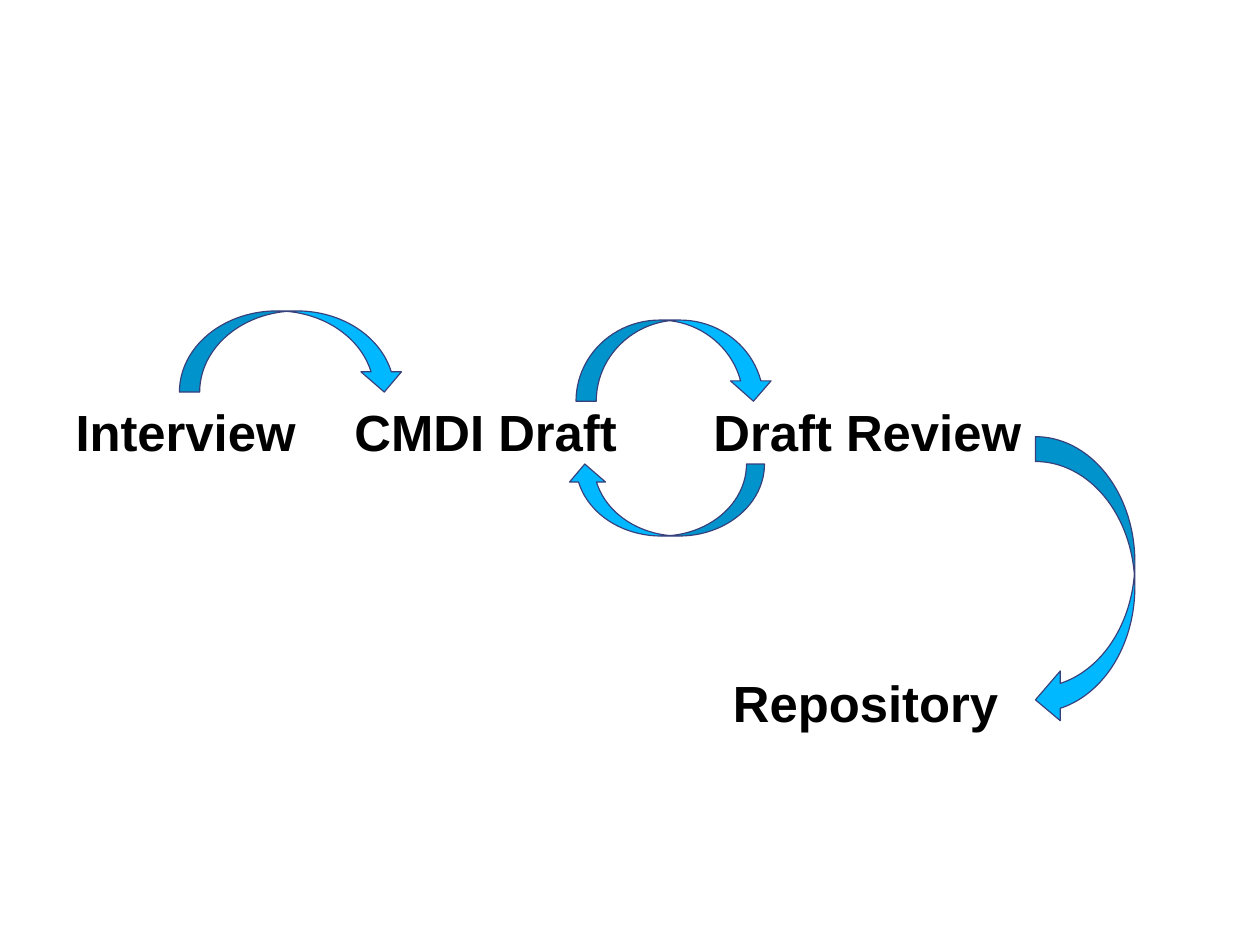
from pptx import Presentation
from pptx.dml.color import RGBColor
from pptx.enum.shapes import MSO_SHAPE
from pptx.enum.text import MSO_ANCHOR, PP_ALIGN
from pptx.util import Emu, Inches, Pt

DOWN = MSO_SHAPE.CURVED_DOWN_ARROW
UP = MSO_SHAPE.CURVED_UP_ARROW
LEFT = MSO_SHAPE.CURVED_LEFT_ARROW
MIDDLE = MSO_ANCHOR.MIDDLE
CENTER = PP_ALIGN.CENTER

PAGE_WIDTH = Emu(10080625)
PAGE_HEIGHT = Emu(7559675)
LABEL_HEIGHT = 0.61
STEP_TOP = 3.5
REPOSITORY_TOP = 5.87


def color(value):
    return RGBColor.from_string(value)


def add_label(page, text, left, top, width):
    box = page.shapes.add_textbox(
        Inches(left), Inches(top), Inches(width), Inches(LABEL_HEIGHT))
    frame = box.text_frame
    frame.word_wrap = False
    frame.vertical_anchor = MIDDLE
    para = frame.paragraphs[0]
    para.text = text
    para.alignment = CENTER
    para.line_spacing = 0.93
    para.font.name = "Arial"
    para.font.size = Pt(32)
    para.font.bold = True
    para.font.color.rgb = color("000000")


def add_arrow(page, kind, box, flipped=False):
    arrow = page.shapes.add_shape(kind, *map(Inches, box))
    arrow.shadow.inherit = False
    arrow.fill.solid()
    arrow.fill.fore_color.rgb = color("00B8FF")
    arrow.line.color.rgb = color("37407B")
    arrow.line.width = Pt(0.75)
    for index, value in enumerate((0.25, 0.5, 0.25)):
        arrow.adjustments[index] = value
    if flipped:
        arrow._element.spPr.get_or_add_xfrm().set("flipH", "1")


def add_workflow(page, left, top):
    for text, offset, drop, width in (
        ("Interview", 0, 0, 2.15),
        ("CMDI Draft", 2.44, 0, 2.52),
        ("Draft Review", 5.58, 0, 2.92),
        ("Repository", 5.75, REPOSITORY_TOP - STEP_TOP, 2.55),
    ):
        add_label(page, text, left + offset, top + drop, width)

    for kind, offset, drop, width, height, flipped in (
        (DOWN, 1.02, -0.78, 1.97, 0.71, False),
        (DOWN, 4.49, -0.7, 1.73, 0.71, False),
        (UP, 4.41, 0.56, 1.73, 0.63, True),
        (LEFT, 8.51, 0.32, 0.87, 2.52, False),
    ):
        add_arrow(page, kind, (left + offset, top + drop, width, height), flipped)


def main():
    deck = Presentation()
    deck.slide_width = PAGE_WIDTH
    deck.slide_height = PAGE_HEIGHT
    page = deck.slides.add_slide(deck.slide_layouts[6])
    add_workflow(page, 0.55, STEP_TOP)
    deck.save("out.pptx")


if __name__ == "__main__":
    main()
